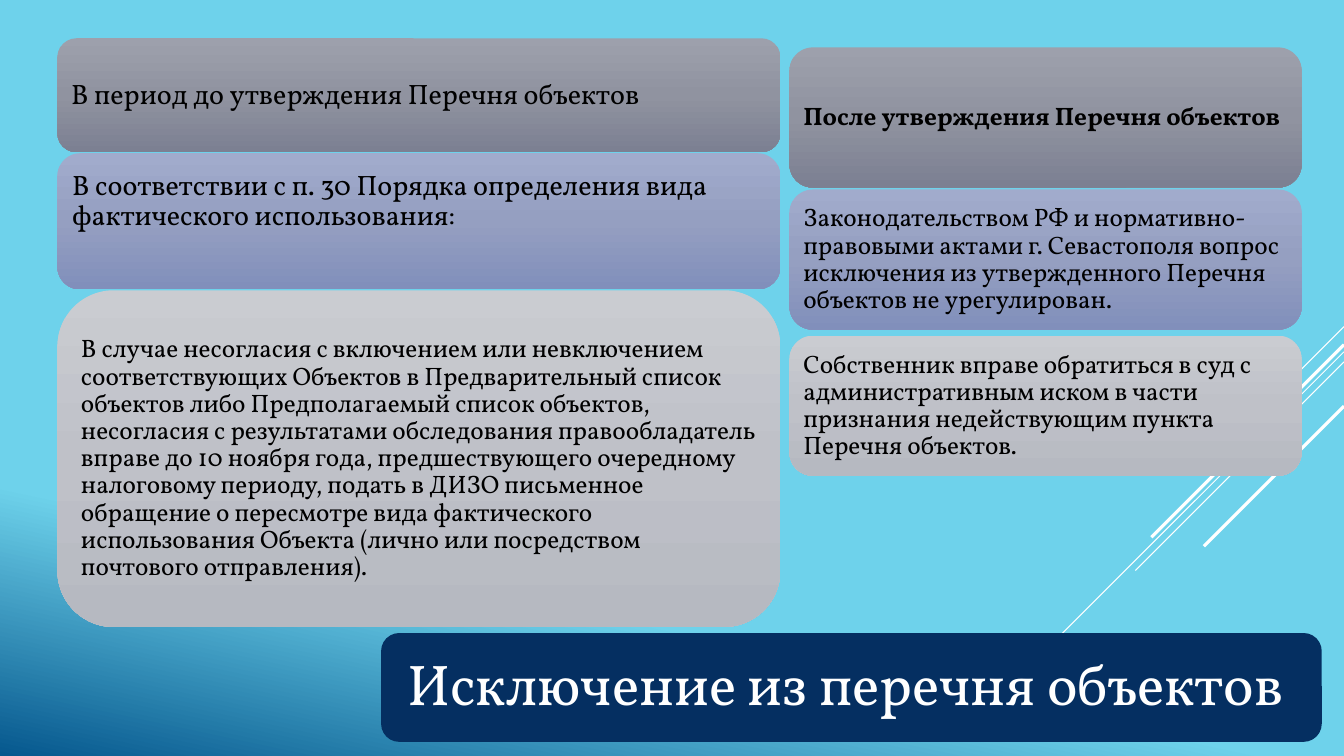
from copy import deepcopy

from pptx import Presentation
from pptx.dml.color import RGBColor
from pptx.enum import shapes, text
from pptx.oxml import ns, xmlchemy
from pptx.util import Inches, Pt
from lxml import etree

FONT = "Vollkorn"
SLIDE_WIDTH = 13.33
GRAY = [(0, "9DA0AC"), (0.5, "9093A0"), (1, "7C8092")]
BLUE = [(0, "A1ABCC"), (0.5, "959FC1"), (1, "818FBB")]
LIGHT = [(0, "CACCD1"), (0.5, "BFC1C8"), (1, "B6B9C1")]
SKY = [(0.74, "6ED2EB"), (1, "06588E")]

RAYS = [(3.24, 1, 0.75), (3.49, 3.26, 0.75), (3.59, 2.07, 0.75),
        (3.42, 1.91, 2.25), (4.03, 1.39, 2.25)]

BEFORE_APPROVAL = [
    (0.38, 1.13, GRAY, "В период до утверждения Перечня объектов",
     dict(size=20, inset=0.08)),
    (1.52, 1.35, BLUE,
     "В соответствии с п. 30 Порядка определения вида фактического использования:",
     dict(size=20, inset=0.08, bottom=0.47)),
    (2.88, 3.34, LIGHT,
     "В случае несогласия с включением или невключением соответствующих Объектов "
     "в Предварительный список объектов либо Предполагаемый список объектов, "
     "несогласия с результатами обследования правообладатель вправе до 10 ноября года, "
     "предшествующего очередному налоговому периоду, подать в ДИЗО письменное обращение "
     "о пересмотре вида фактического использования Объекта (лично или посредством "
     "почтового отправления).", {}),
]
AFTER_APPROVAL = [
    (0.47, 1.39, GRAY, "После утверждения Перечня объектов", dict(bold=True)),
    (1.88, 1.39, BLUE,
     "Законодательством РФ и нормативно-правовыми актами г. Севастополя вопрос "
     "исключения из утвержденного Перечня объектов не урегулирован.", {}),
    (3.33, 1.39, LIGHT,
     "Собственник вправе обратиться в суд с административным иском в части "
     "признания недействующим пункта Перечня объектов.", {}),
]


def color(value):
    return RGBColor.from_string(value)


def fill_gradient(fill, element, stops, angle):
    fill.gradient()
    fill.gradient_angle = 360 - angle
    stop_list = next(element.iter(ns.qn("a:gsLst")))
    while len(stop_list) < len(stops):
        stop_list.append(deepcopy(stop_list[0]))
    for stop, (position, value) in zip(fill.gradient_stops, stops):
        stop.position = position
        stop.color.rgb = color(value)


def write(shape, content, size=18, bold=False, font_color="000000",
          align=text.PP_ALIGN.LEFT, inset=0.07, left=None, right=None, bottom=None):
    frame = shape.text_frame
    frame.word_wrap = True
    frame.auto_size = text.MSO_AUTO_SIZE.NONE
    frame.vertical_anchor = text.MSO_ANCHOR.MIDDLE
    frame.margin_top = Inches(inset)
    frame.margin_left = Inches(inset if left is None else left)
    frame.margin_right = Inches(inset if right is None else right)
    frame.margin_bottom = Inches(inset if bottom is None else bottom)
    paragraph = frame.paragraphs[0]
    paragraph.alignment = align
    paragraph.line_spacing = 0.9
    run = paragraph.add_run()
    run.text = content
    run.font.name = FONT
    run.font.size = Pt(size)
    run.font.bold = bold
    run.font.color.rgb = color(font_color)


def add_ray(slide, top, reach, weight):
    ray = slide.shapes.add_connector(
        shapes.MSO_CONNECTOR.STRAIGHT, Inches(SLIDE_WIDTH), Inches(top),
        Inches(SLIDE_WIDTH - reach), Inches(top + reach))
    ray.line.color.rgb = color("FFFFFF")
    ray.line.width = Pt(weight)
    etree.SubElement(ray.element.spPr, ns.qn("a:effectLst"))


def add_panel(slide, left, top, width, height):
    panel = slide.shapes.add_shape(
        shapes.MSO_SHAPE.ROUNDED_RECTANGLE,
        Inches(left), Inches(top), Inches(width), Inches(height))
    panel.shadow.inherit = False
    panel.line.fill.background()
    return panel


def add_column(slide, left, width, blocks):
    for top, height, stops, content, style in blocks:
        panel = add_panel(slide, left, top, width, height)
        fill_gradient(panel.fill, panel.element, stops, 90)
        write(panel, content, **style)


def add_title(slide):
    banner = add_panel(slide, 3.78, 6.28, 9.33, 1.08)
    banner.fill.solid()
    banner.fill.fore_color.rgb = color("052F61")
    title = slide.shapes.title
    title.left, title.top = Inches(3.83), Inches(6.33)
    title.width, title.height = Inches(9.23), Inches(0.97)
    write(title, "Исключение из перечня объектов", size=41, font_color="FFFFFF",
          align=text.PP_ALIGN.RIGHT, inset=0.17, left=0.05, right=0.32)
    banner.element.addnext(title.element)


def main():
    presentation = Presentation()
    presentation.slide_width = Inches(SLIDE_WIDTH)
    presentation.slide_height = Inches(7.5)
    slide = presentation.slides.add_slide(presentation.slide_layouts[5])
    fill_gradient(slide.background.fill, slide.element, SKY, 102)
    for ray in RAYS:
        add_ray(slide, *ray)
    add_title(slide)
    add_column(slide, 0.57, 7.17, BEFORE_APPROVAL)
    add_column(slide, 7.83, 5.08, AFTER_APPROVAL)
    presentation.save("out.pptx")


if __name__ == "__main__":
    main()
